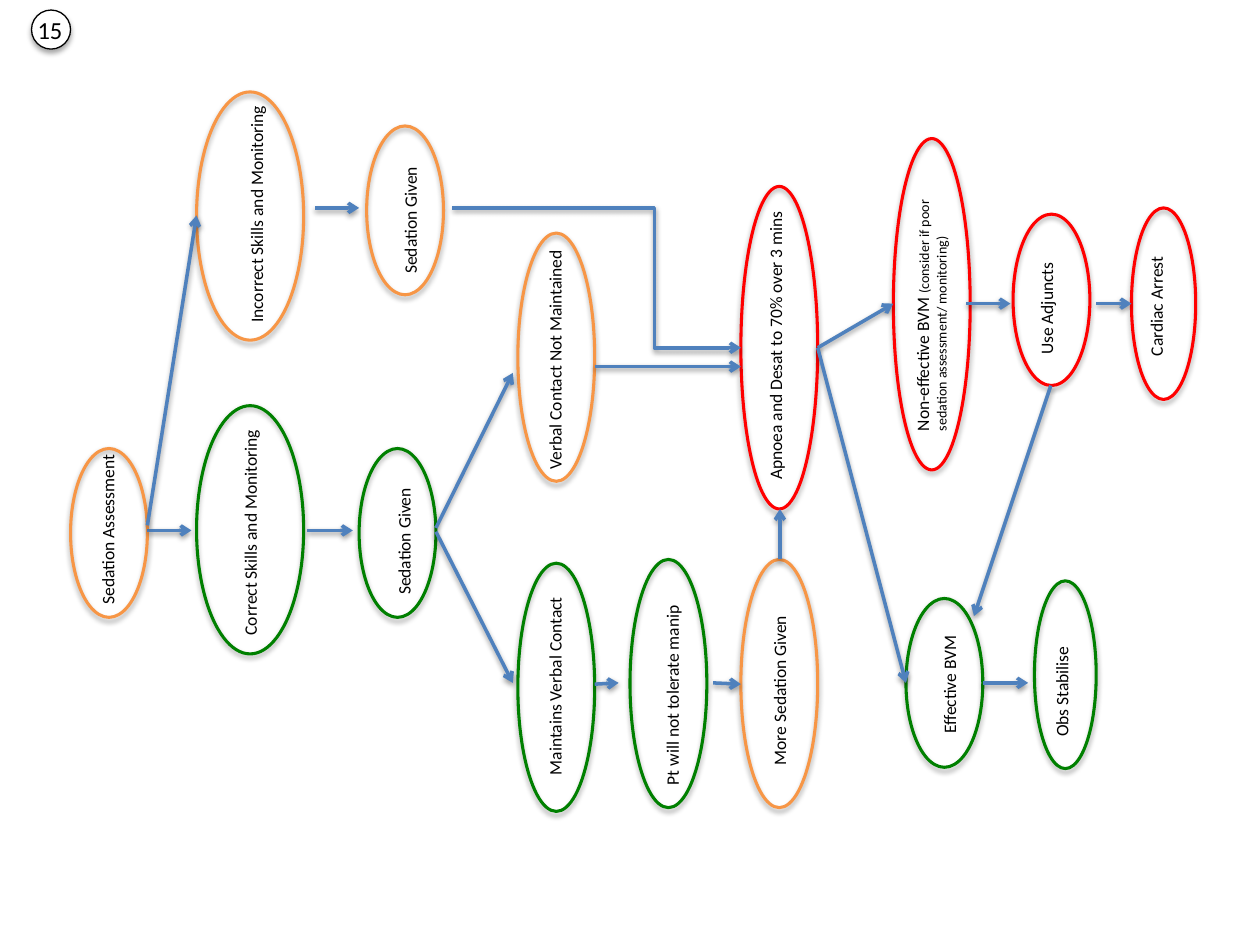
from typing import NamedTuple

from lxml.etree import SubElement
from pptx import Presentation
from pptx.dml.color import RGBColor
from pptx.enum.shapes import MSO_CONNECTOR as Link, MSO_SHAPE
from pptx.enum.text import MSO_AUTO_SIZE
from pptx.oxml.ns import qn
from pptx.util import Inches, Pt

BLACK = RGBColor(0x00, 0x00, 0x00)
WHITE = RGBColor(0xFF, 0xFF, 0xFF)
ORANGE = RGBColor(0xF7, 0x96, 0x46)
GREEN = RGBColor(0x00, 0x80, 0x00)
RED = RGBColor(0xFF, 0x00, 0x00)
BLUE = RGBColor(0x4F, 0x81, 0xBD)

FONT = "Calibri"
OVAL_W = 0.61
LINE_H = 0.27


class Step(NamedTuple):
    """One oval of the flow; nudge moves its label off the oval's centre."""
    text: str
    color: RGBColor
    box: tuple
    label_length: float
    nudge: tuple = (0, 0)
    note: str = ""
    wrap: bool = True


STEPS = [
    Step("Sedation Assessment", ORANGE, (0.56, 3.56, OVAL_W, 1.34), 1.43, (-0.01, -0.05)),
    Step("Correct Skills and Monitoring", GREEN, (1.56, 3.22, 0.85, 1.97), 1.93, (0, -0.03)),
    Step("Incorrect Skills and Monitoring", ORANGE, (1.56, 0.73, 0.85, 1.97), 1.93, (0.05, -0.02)),
    Step("Sedation Given", GREEN, (2.85, 3.56, OVAL_W, 1.34), 1.22, (0.05, -0.02)),
    Step("Sedation Given", ORANGE, (2.91, 1, OVAL_W, 1.34), 1.22, (0.04, -0.01)),
    Step("Maintains Verbal Contact", GREEN, (4.11, 4.47, OVAL_W, 1.97), 1.89, (-0.01, -0.15)),
    Step("Verbal Contact Not Maintained", ORANGE, (4.11, 1.85, OVAL_W, 1.97), 1.98, (-0.01, 0),
         wrap=False),
    Step("Pt will not tolerate manip", GREEN, (5, 4.44, OVAL_W, 1.97), 1.89, (0.03, -0.04)),
    Step("More Sedation Given", ORANGE, (5.88, 4.44, OVAL_W, 1.97), 1.41, (0, 0.04), wrap=False),
    Step("Apnoea and Desat to 70% over 3 mins", RED, (5.88, 1.48, OVAL_W, 2.56), 2.41,
         (-0.03, -0.06)),
    Step("Effective BVM", GREEN, (7.19, 4.75, OVAL_W, 1.34), 1.7, (0.04, -0.35)),
    Step("Non-effective BVM ", RED, (7.09, 1.1, OVAL_W, 2.63), 2.41, (-0.01, -0.1),
         note="(consider if poor sedation assessment/ monitoring)"),
    Step("Use Adjuncts", RED, (8.04, 1.7, OVAL_W, 1.36), 1.07, (-0.04, 0)),
    Step("Obs Stabilise", GREEN, (8.21, 4.61, 0.49, 1.49), 1.12, (-0.03, 0.03)),
    Step("Cardiac Arrest", RED, (8.98, 1.65, 0.51, 1.52), 1.21, (-0.06, -0.09)),
]

STRAIGHT_ARROWS = [
    ((1.17, 4.21), (1.52, 4.21)),
    ((1.17, 4.17), (1.56, 1.71)),
    ((2.44, 4.21), (2.8, 4.21)),
    ((2.5, 1.65), (2.85, 1.65)),
    ((3.46, 4.19), (4.07, 2.96)),
    ((3.46, 4.22), (4.07, 5.42)),
    ((4.72, 5.43), (4.91, 5.42)),
    ((4.72, 2.91), (5.88, 2.91)),
    ((5.66, 5.42), (5.88, 5.43)),
    ((6.19, 4.44), (6.19, 4.04)),
    ((6.49, 2.76), (7.09, 2.41)),
    ((6.49, 2.76), (7.19, 5.42)),
    ((7.8, 5.42), (8.16, 5.42)),
    ((7.67, 2.41), (8.02, 2.41)),
    ((8.34, 3.06), (7.73, 4.89)),
    ((8.7, 2.41), (8.98, 2.41)),
]


def add_shadow(shape, distance, opacity):
    """Soft black shadow straight below; call after the line is set."""
    effects = SubElement(shape._element.spPr, qn("a:effectLst"))
    outer = SubElement(effects, qn("a:outerShdw"), blurRad=str(Pt(3.1)),
                       dist=str(Pt(distance)), dir="5400000", rotWithShape="0")
    black = SubElement(outer, qn("a:srgbClr"), val=str(BLACK))
    SubElement(black, qn("a:alpha"), val=str(opacity * 1000))


def add_oval(slide, box, color, width, fill=None):
    oval = slide.shapes.add_shape(MSO_SHAPE.OVAL, *map(Inches, box))
    if fill is None:
        oval.fill.background()
    else:
        oval.fill.solid()
        oval.fill.fore_color.rgb = fill
    oval.line.color.rgb = color
    oval.line.width = Pt(width)
    add_shadow(oval, 1.8, 35)


def add_label(slide, box, text, size, wrap=True):
    label = slide.shapes.add_textbox(*map(Inches, box))
    frame = label.text_frame
    frame.word_wrap = wrap
    frame.auto_size = MSO_AUTO_SIZE.SHAPE_TO_FIT_TEXT
    paragraph = frame.paragraphs[0]
    paragraph.add_run().text = text
    paragraph.font.name = FONT
    paragraph.font.size = Pt(size)
    paragraph.font.color.rgb = BLACK
    return label


def add_step(slide, step):
    left, top, width, height = step.box
    center_x = left + width / 2 + step.nudge[0]
    center_y = top + height / 2 + step.nudge[1]
    depth = 0.4 if step.note else LINE_H
    label_box = (center_x - step.label_length / 2, center_y - depth / 2,
                 step.label_length, depth)
    label = add_label(slide, label_box, step.text, 10, step.wrap)
    label.rotation = 270
    if step.note:
        note = label.text_frame.paragraphs[0].add_run()
        note.text = step.note
        note.font.size = Pt(8)
    add_oval(slide, step.box, step.color, 1.75)


def add_arrow(slide, start, end, kind=Link.STRAIGHT):
    arrow = slide.shapes.add_connector(kind, *map(Inches, start + end))
    arrow.line.color.rgb = BLUE
    arrow.line.width = Pt(2)
    SubElement(arrow.line._get_or_add_ln(), qn("a:tailEnd"), type="arrow")
    add_shadow(arrow, 1.6, 38)
    return arrow


def add_bent_arrow(slide, start, end, bend):
    """Elbow arrow that turns at the given share of its width."""
    arrow = add_arrow(slide, start, end, Link.ELBOW)
    geometry = arrow._element.spPr.find(qn("a:prstGeom"))
    guides = geometry.find(qn("a:avLst"))
    if guides is None:
        guides = SubElement(geometry, qn("a:avLst"))
    SubElement(guides, qn("a:gd"), name="adj1", fmla=f"val {round(bend * 100000)}")


def add_number_badge(slide, box, number):
    left, top, width, height = box
    add_oval(slide, box, BLACK, 0.75, WHITE)
    add_label(slide, (left - 0.05, top - 0.01, width + 0.09, height + 0.03),
              number, 14, wrap=False)


def main():
    deck = Presentation()
    deck.slide_width, deck.slide_height = Inches(10), Inches(7.5)
    slide = deck.slides.add_slide(deck.slide_layouts[6])
    add_number_badge(slide, (0.25, 0.08, 0.31, 0.31), "15")
    for step in STEPS:
        add_step(slide, step)
    for start, end in STRAIGHT_ARROWS:
        add_arrow(slide, start, end)
    add_bent_arrow(slide, (3.59, 1.65), (5.88, 2.76), 0.7)
    deck.save("out.pptx")


if __name__ == "__main__":
    main()
